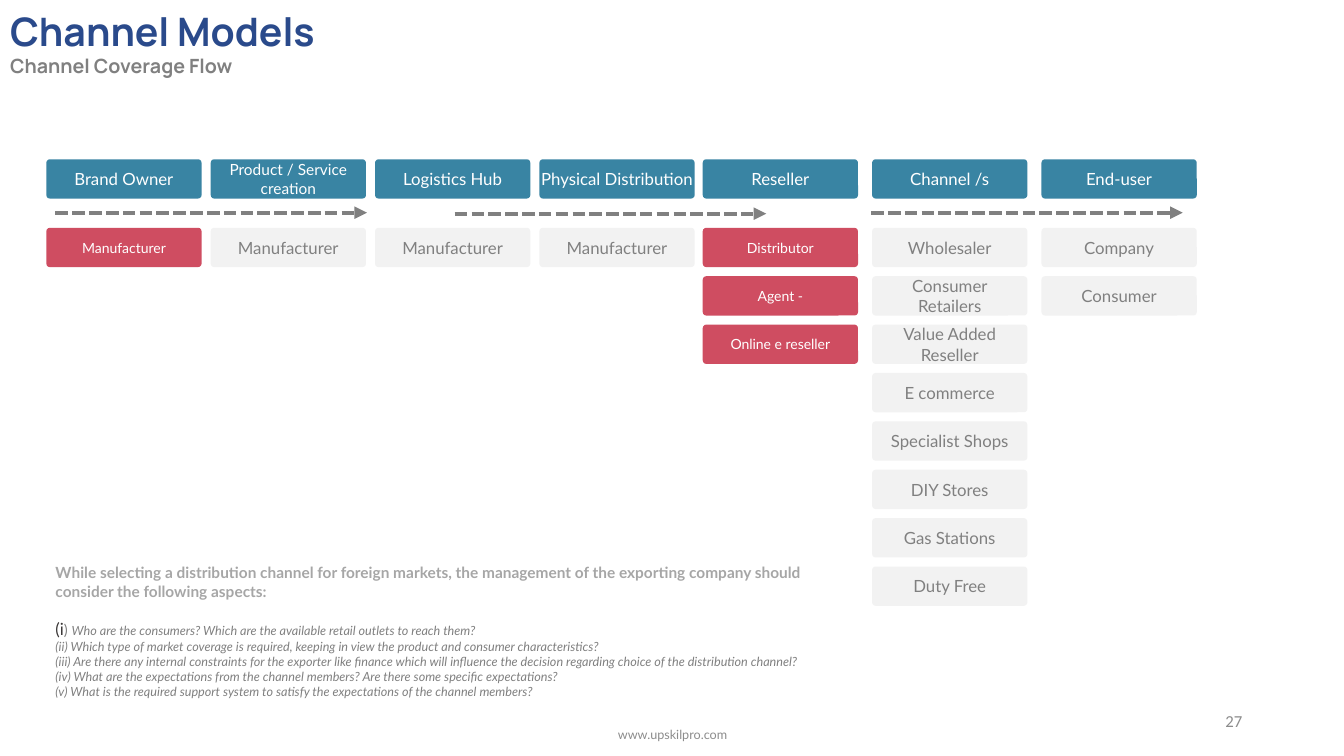
import pptx
import pptx.dml.color
import pptx.enum.dml
import pptx.enum.shapes
import pptx.enum.text
import pptx.oxml.ns
import pptx.util
from lxml import etree
from pptx.util import Inches

ALIGN = pptx.enum.text.PP_ALIGN
ANCHOR = pptx.enum.text.MSO_ANCHOR

TEAL, RED, LIGHT = "3984A3", "CF4D61", "F2F2F2"
WHITE, GREY, FOOTER_GREY = "FFFFFF", "808080", "8C8C8C"

BOX_WIDTH, BOX_HEIGHT = 1.54, 0.39
HEADER_TOP, FIRST_ROW_TOP, ROW_STEP = 1.58, 2.26, 0.48

# left, header, header size, cell fill of the first row down, cell labels
COLUMNS = [
    (0.46, "Brand Owner", 12, RED, ["Manufacturer"]),
    (2.09, "Product / Service creation", 11, LIGHT, ["Manufacturer"]),
    (3.72, "Logistics Hub", 12, LIGHT, ["Manufacturer"]),
    (5.35, "Physical Distribution", 12, LIGHT, ["Manufacturer"]),
    (6.97, "Reseller", 12, RED, ["Distributor", "Agent -", "Online e reseller"]),
    (8.65, "Channel /s", 12, LIGHT,
     ["Wholesaler", "Consumer Retailers", "Value Added Reseller", "E commerce",
      "Specialist Shops", "DIY Stores", "Gas Stations", "Duty Free"]),
    (10.33, "End-user", 12, LIGHT, ["Company", "Consumer"]),
]

ARROWS = [(0.55, 2.11), (4.51, 2.12), (8.64, 2.11)]
ARROW_LENGTH = 3.09

ASPECTS_HEADING = ("While selecting a distribution channel for foreign markets, the management "
                   "of the exporting company should consider the following aspects:")
FIRST_ASPECT = [
    ("(i", 12, "3B3838", False),
    (") ", 10.5, GREY, False),
    ("Who are the consumers? Which are the available retail outlets to reach them?",
     9, GREY, True),
]
OTHER_ASPECTS = [
    "(ii) Which type of market coverage is required, keeping in view the product and "
    "consumer characteristics?",
    "(iii) Are there any internal constraints for the exporter like finance which will "
    "influence the decision regarding choice of the distribution channel?",
    "(iv) What are the expectations from the channel members? Are there some specific "
    "expectations?",
    "(v) What is the required support system to satisfy the expectations of the channel "
    "members?",
]


def rgb(color):
    return pptx.dml.color.RGBColor.from_string(color)


def format_font(font, size, color, name="Lato", bold=False, italic=False):
    font.name = name
    font.size = pptx.util.Pt(size)
    font.color.rgb = rgb(color)
    font.bold = bold
    font.italic = italic


def place(shape, left, top, width, height):
    shape.left, shape.top = Inches(left), Inches(top)
    shape.width, shape.height = Inches(width), Inches(height)


def add_box(slide, left, top, label, fill, size, color, inset=None):
    """Add a rounded box with a centred label."""
    shape = slide.shapes.add_shape(
        pptx.enum.shapes.MSO_SHAPE.ROUNDED_RECTANGLE,
        Inches(left), Inches(top), Inches(BOX_WIDTH), Inches(BOX_HEIGHT))
    shape.adjustments[0] = 0.09
    shape.shadow.inherit = False
    shape.fill.solid()
    shape.fill.fore_color.rgb = rgb(fill)
    shape.line.fill.background()
    frame = shape.text_frame
    frame.word_wrap = True
    frame.vertical_anchor = ANCHOR.MIDDLE
    if inset is not None:
        frame.margin_left = frame.margin_right = Inches(inset)
        frame.margin_top = frame.margin_bottom = Inches(inset)
    frame.text = label
    paragraph = frame.paragraphs[0]
    paragraph.alignment = ALIGN.CENTER
    format_font(paragraph.runs[0].font, size, color)


def add_column(slide, left, header, header_size, fill, labels):
    add_box(slide, left, HEADER_TOP, header, TEAL, header_size, WHITE, inset=0)
    size, color = (10, WHITE) if fill == RED else (12, GREY)
    for row, label in enumerate(labels):
        add_box(slide, left, FIRST_ROW_TOP + row * ROW_STEP, label, fill, size, color)


def add_dashed_arrow(slide, left, top):
    arrow = slide.shapes.add_connector(
        pptx.enum.shapes.MSO_CONNECTOR.STRAIGHT,
        Inches(left), Inches(top), Inches(left + ARROW_LENGTH), Inches(top))
    arrow.line.color.rgb = rgb(GREY)
    arrow.line.width = pptx.util.Pt(3)
    arrow.line.dash_style = pptx.enum.dml.MSO_LINE.SQUARE_DOT
    line = arrow.line._get_or_add_ln()
    etree.SubElement(line, pptx.oxml.ns.qn("a:tailEnd"), type="triangle")
    properties = arrow._element.spPr
    etree.SubElement(properties, pptx.oxml.ns.qn("a:effectLst"))


def add_footer_text(slide, left, top, width, text, size, font_name, alignment):
    box = slide.shapes.add_textbox(Inches(left), Inches(top), Inches(width), Inches(0.4))
    frame = box.text_frame
    frame.word_wrap = True
    frame.vertical_anchor = ANCHOR.MIDDLE
    frame.text = text
    paragraph = frame.paragraphs[0]
    paragraph.alignment = alignment
    format_font(paragraph.runs[0].font, size, FOOTER_GREY, font_name)


def prepare_frame(placeholder):
    frame = placeholder.text_frame
    frame.word_wrap = True
    frame.auto_size = pptx.enum.text.MSO_AUTO_SIZE.NONE
    frame.vertical_anchor = ANCHOR.TOP
    return frame


def fill_title(title):
    place(title, 0, 0.02, 4.22, 0.81)
    frame = prepare_frame(title)
    frame.text = "Channel Models\nChannel Coverage Flow"
    for paragraph, size, color in zip(frame.paragraphs, (28, 14), ("2A4A8B", GREY)):
        paragraph.alignment = ALIGN.LEFT
        format_font(paragraph.runs[0].font, size, color, "Manrope", bold=True)


def fill_aspects(body):
    place(body, 0.45, 5.54, 8.07, 1.46)
    frame = prepare_frame(body)
    frame.text = "\n".join([ASPECTS_HEADING, ""] + OTHER_ASPECTS)
    heading, first, *others = frame.paragraphs
    for paragraph in frame.paragraphs:
        properties = paragraph._p.get_or_add_pPr()
        properties.set("marL", "0")
        properties.set("indent", "0")
        etree.SubElement(properties, pptx.oxml.ns.qn("a:buNone"))
        paragraph.space_before = pptx.util.Pt(0)
    format_font(heading.runs[0].font, 11, "A6A6A6", bold=True)
    first.space_before = pptx.util.Pt(13)
    for text, size, color, italic in FIRST_ASPECT:
        run = first.add_run()
        run.text = text
        format_font(run.font, size, color, italic=italic)
    for paragraph in others:
        format_font(paragraph.runs[0].font, 9, GREY, italic=True)


def main():
    presentation = pptx.Presentation()
    presentation.slide_width = Inches(13.33)
    presentation.slide_height = Inches(7.5)
    slide = presentation.slides.add_slide(presentation.slide_layouts[1])

    fill_title(slide.shapes.title)
    fill_aspects(slide.placeholders[1])
    for column in COLUMNS:
        add_column(slide, *column)
    for left, top in ARROWS:
        add_dashed_arrow(slide, left, top)
    add_footer_text(slide, 9.42, 6.95, 3, "27", 12, "Calibri", ALIGN.RIGHT)
    add_footer_text(slide, 4.42, 7.09, 4.5, "www.upskilpro.com", 9, "Lato", ALIGN.CENTER)

    presentation.save("out.pptx")


if __name__ == "__main__":
    main()
